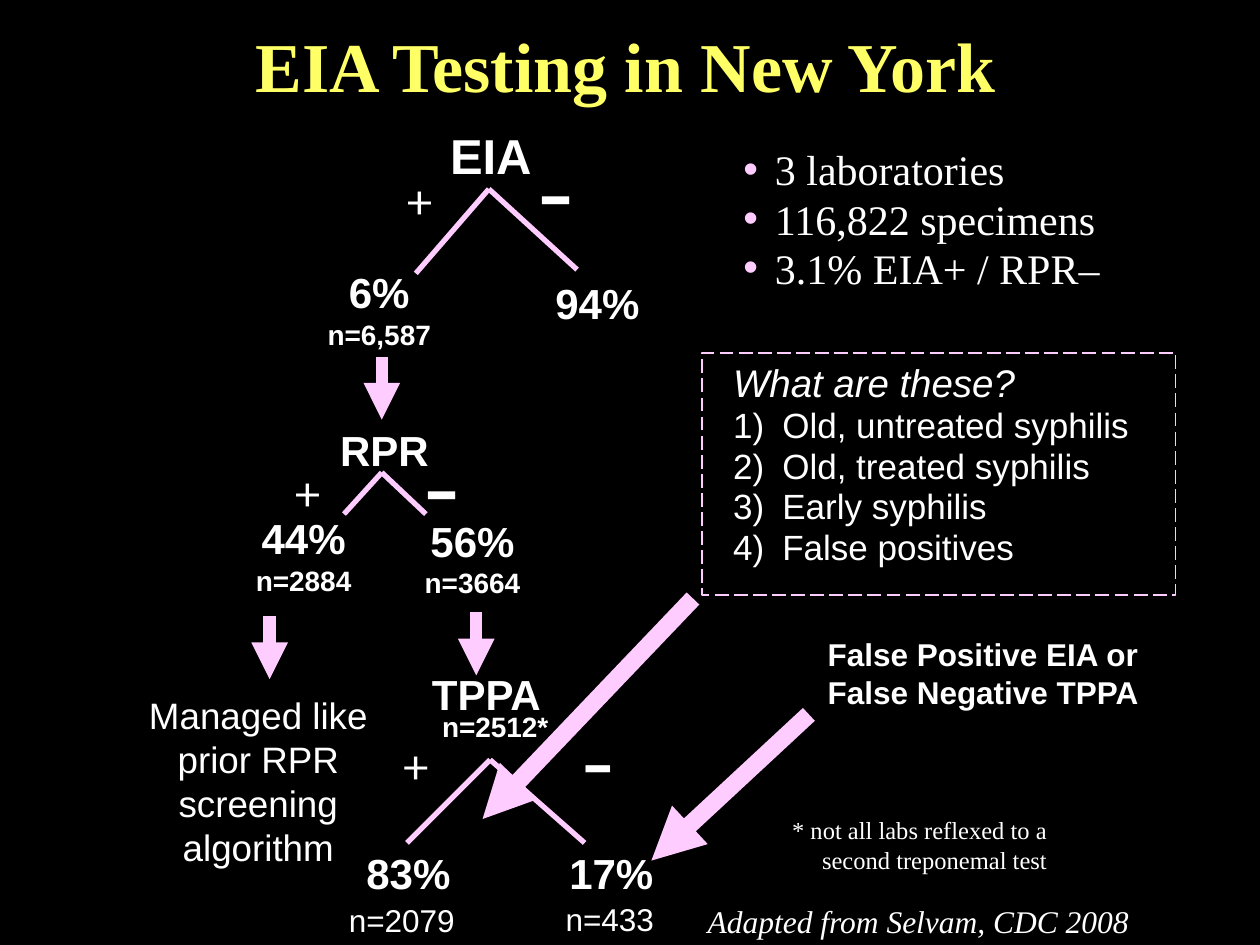
from lxml import etree
from pptx import Presentation
from pptx.dml.color import RGBColor
from pptx.enum.dml import MSO_LINE
from pptx.enum.shapes import MSO_CONNECTOR, MSO_SHAPE
from pptx.enum.text import MSO_ANCHOR, MSO_AUTO_SIZE, PP_ALIGN
from pptx.oxml.ns import qn
from pptx.util import Inches, Pt

LEFT, CENTER, RIGHT = PP_ALIGN.LEFT, PP_ALIGN.CENTER, PP_ALIGN.RIGHT
MIDDLE, TOP = MSO_ANCHOR.MIDDLE, MSO_ANCHOR.TOP
FIXED, GROW = MSO_AUTO_SIZE.NONE, MSO_AUTO_SIZE.SHAPE_TO_FIT_TEXT
STRAIGHT = MSO_CONNECTOR.STRAIGHT
RECTANGLE, OVAL = MSO_SHAPE.RECTANGLE, MSO_SHAPE.OVAL
LONG_DASH = MSO_LINE.LONG_DASH

COLORS = {"ground": "000000", "text": "FFFFFF", "title": "FFFF66", "accent": "FFCCFF"}
SANS, SERIF, SIGN = "Arial", "Times New Roman", "Cambria"
COLUMNS, ROWS = 100, 75


def color(name):
    return RGBColor.from_string(COLORS[name])


class FlowSlide:
    """Holds the style and the slide; places are columns and rows of its grid."""

    def __init__(self, deck):
        self.cell_width = deck.slide_width / COLUMNS
        self.cell_height = deck.slide_height / ROWS
        self.slide = deck.slides.add_slide(deck.slide_layouts[1])
        self.shapes = self.slide.shapes
        self.slide.background.fill.solid()
        self.slide.background.fill.fore_color.rgb = color("ground")

    def place(self, *lengths):
        cells = (self.cell_width, self.cell_height)
        return [round(length * cells[i % 2]) for i, length in enumerate(lengths)]

    def move(self, shape, *box):
        shape.left, shape.top, shape.width, shape.height = self.place(*box)

    def run(self, paragraph, words, size, font=SANS, bold=False, italic=False, ink="text"):
        run = paragraph.add_run()
        run.text = words
        run.font.size, run.font.name = Pt(size), font
        run.font.bold, run.font.italic = bold, italic
        run.font.color.rgb = color(ink)

    def title(self, words, *box):
        title = self.shapes.title
        self.move(title, *box)
        frame = title.text_frame
        frame.auto_size, frame.vertical_anchor = FIXED, MIDDLE
        frame.paragraphs[0].alignment = CENTER
        self.run(frame.paragraphs[0], words, 40, SERIF, bold=True, ink="title")

    def hang(self, paragraph, margin, indent, bullet=None):
        """Set a hanging indent in inches, with a dot, a number or no mark."""
        props = paragraph._p.get_or_add_pPr()
        props.set("marL", str(Inches(margin)))
        props.set("indent", str(Inches(indent)))
        if bullet == "dot":
            tint = etree.SubElement(props, qn("a:buClr"))
            etree.SubElement(tint, qn("a:srgbClr"), val=COLORS["accent"])
            etree.SubElement(props, qn("a:buChar"), char="•")
        elif bullet == "number":
            etree.SubElement(props, qn("a:buAutoNum"), type="arabicParenR")
        paragraph.line_spacing = 0.8

    def facts(self, items, *box):
        body = self.slide.placeholders[1]
        self.move(body, *box)
        frame = body.text_frame
        frame.auto_size, frame.vertical_anchor = FIXED, TOP
        for i, item in enumerate(items):
            paragraph = frame.add_paragraph() if i else frame.paragraphs[0]
            self.hang(paragraph, 0.38, -0.25, "dot")
            paragraph.space_before = Pt(5 if i else 0)
            self.run(paragraph, item, 24, SERIF)

    def frame(self, box, wrap):
        frame = self.shapes.add_textbox(*self.place(*box)).text_frame
        frame.word_wrap, frame.auto_size = wrap, GROW
        return frame

    def text(self, words, size, *box, align=LEFT, wrap=False, **style):
        paragraph = self.frame(box, wrap).paragraphs[0]
        paragraph.alignment = align
        self.run(paragraph, words, size, **style)

    def share(self, percent, count, *box):
        """A percentage with its sample size on the line below."""
        paragraph = self.frame(box, False).paragraphs[0]
        paragraph.alignment = CENTER
        self.run(paragraph, percent, 24, bold=True)
        paragraph.add_line_break()
        self.run(paragraph, count, 16, bold=True)

    def question(self, heading, answers, *box):
        frame = self.frame(box, True)
        self.hang(frame.paragraphs[0], 0.52, -0.39)
        self.run(frame.paragraphs[0], heading, 22, italic=True)
        for answer in answers:
            paragraph = frame.add_paragraph()
            self.hang(paragraph, 0.52, -0.39, "number")
            paragraph.space_before = Pt(4)
            self.run(paragraph, answer, 20)

    def line(self, start, end, width=3, arrow=False):
        line = self.shapes.add_connector(STRAIGHT, *self.place(*start, *end))
        line.line.color.rgb, line.line.width = color("accent"), Pt(width)
        if arrow:
            etree.SubElement(line.line._get_or_add_ln(), qn("a:tailEnd"), type="triangle")
        etree.SubElement(line._element.spPr, qn("a:effectLst"))

    def fork(self, apex, positive, negative):
        self.line(apex, positive)
        self.line(apex, negative)

    def step_down(self, column, row):
        self.line((column, row), (column, row + 5), 7, arrow=True)

    def outline(self, kind, *box):
        shape = self.shapes.add_shape(kind, *self.place(*box))
        shape.shadow.inherit = False
        shape.fill.background()
        return shape

    def dashed_box(self, *box):
        border = self.outline(RECTANGLE, *box).line
        border.color.rgb, border.width, border.dash_style = color("accent"), Pt(1), LONG_DASH

    def plus(self, column, row):
        self.text("+", 32, column, row, 4.7, 6.3, font=SIGN)

    def minus(self, column, row, size=60):
        sign = self.outline(OVAL, column, row, 3.3, 2.5)
        sign.line.fill.background()
        frame = sign.text_frame
        frame.word_wrap, frame.vertical_anchor = False, MIDDLE
        frame.paragraphs[0].alignment = CENTER
        self.run(frame.paragraphs[0], "-", size, SERIF)


def main():
    deck = Presentation()
    deck.slide_width, deck.slide_height = Inches(10), Inches(7.5)
    flow = FlowSlide(deck)

    flow.title("EIA Testing in New York", 2.7, 0, 93.9, 10.3)
    flow.facts(["3 laboratories", "116,822 specimens", "3.1% EIA+ / RPR–"],
               56.7, 11.7, 41.1, 15)

    flow.fork((38.8, 15), (33, 21.7), (45.8, 21.4))
    flow.fork((30.3, 37.5), (27.3, 40.8), (33.8, 40.8))
    flow.fork((38.9, 60.3), (32.3, 66.9), (46.4, 66.9))
    for column, row in [(30.3, 28.3), (21.4, 48.9), (37.8, 48.6)]:
        flow.step_down(column, row)
    for column, row in [(31.1, 12.5), (22.2, 35.7), (30.8, 57.3)]:
        flow.plus(column, row)
    for column, row, size in [(42.5, 13.3, 60), (33.4, 36.7, 60), (45.8, 58.6, 54)]:
        flow.minus(column, row, size)

    flow.text("EIA", 28, 34.7, 9.5, 8.5, 5.7, align=CENTER, bold=True)
    for words, column, row, width in [
        ("94%", 43.1, 21.5, 8.7), ("RPR", 26, 33.2, 9.1), ("TPPA", 33.3, 52.6, 10.9),
        ("83%", 28.1, 66.8, 8.7), ("17%", 44.2, 66.8, 8.7),
    ]:
        flow.text(words, 24, column, row, width, 5, bold=True)
    flow.share("6%", "n=6,587", 25, 20.7, 10.2, 7.7)
    flow.share("44%", "n=2884", 19.3, 40.2, 9.6, 7.7)
    flow.share("56%", "n=3664", 32.7, 40.4, 9.6, 7.7)
    flow.text("n=2512*", 16, 34.1, 55.8, 10.5, 3.7, bold=True)
    flow.text("n=2079", 18, 26.7, 71, 14.4, 4, wrap=True)
    flow.text("n=433", 18, 43.9, 70.9, 13.8, 4, wrap=True)
    flow.text("Managed like prior RPR screening algorithm", 21,
              10.5, 54.5, 20, 15, align=CENTER, wrap=True)

    flow.dashed_box(55.7, 28, 37.6, 19.2)
    flow.question("What are these?",
                  ["Old, untreated syphilis", "Old, treated syphilis",
                   "Early syphilis", "False positives"], 55.9, 28.7, 44.1, 17.3)
    flow.text("False Positive EIA or False Negative TPPA", 18,
              64.7, 49.9, 31.7, 7, wrap=True, bold=True)
    flow.line((55, 47.5), (38.3, 65), 10, arrow=True)
    flow.line((64.2, 56.7), (51.7, 68.3), 10, arrow=True)

    flow.text("* not all labs reflexed to a second treponemal test", 14,
              60.8, 64.2, 23.3, 5.7, align=RIGHT, wrap=True, font=SERIF)
    flow.text("Adapted from Selvam, CDC 2008", 18,
              55, 71.1, 35.6, 4, align=RIGHT, font=SERIF, italic=True)
    deck.save("out.pptx")


if __name__ == "__main__":
    main()
